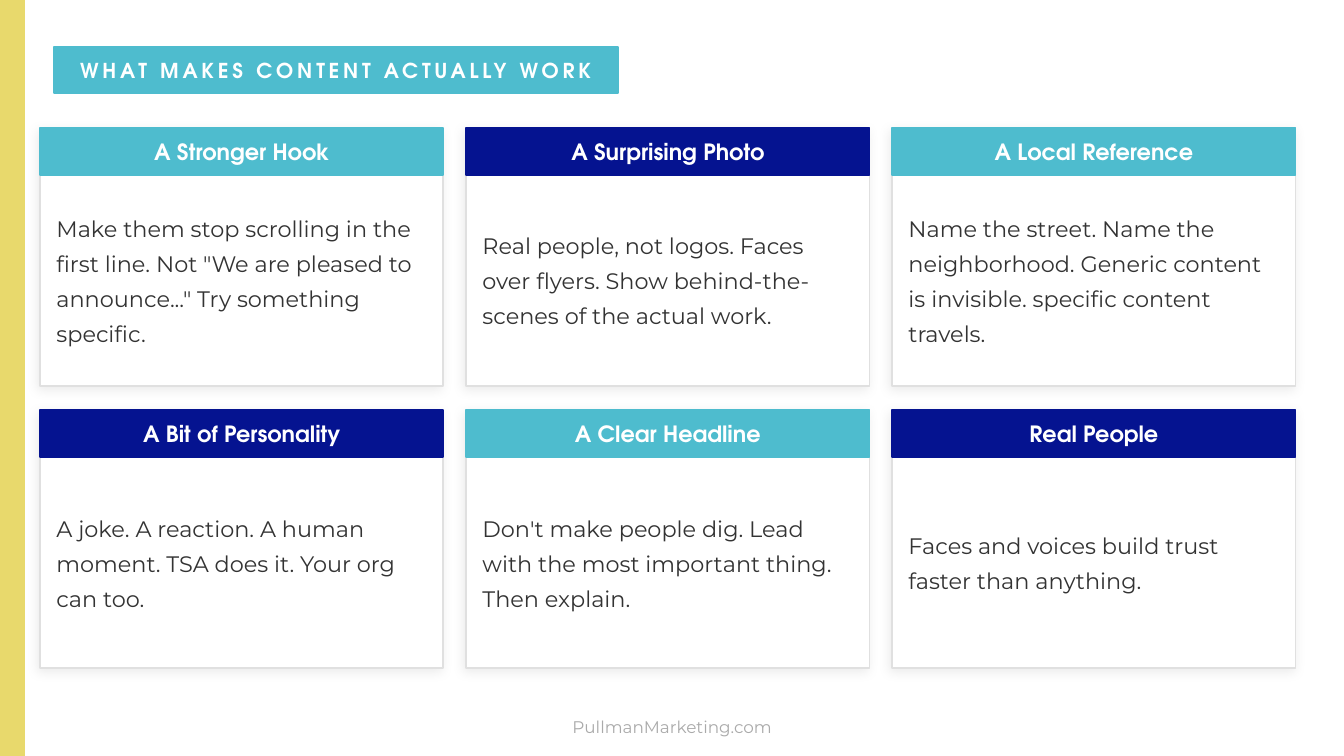
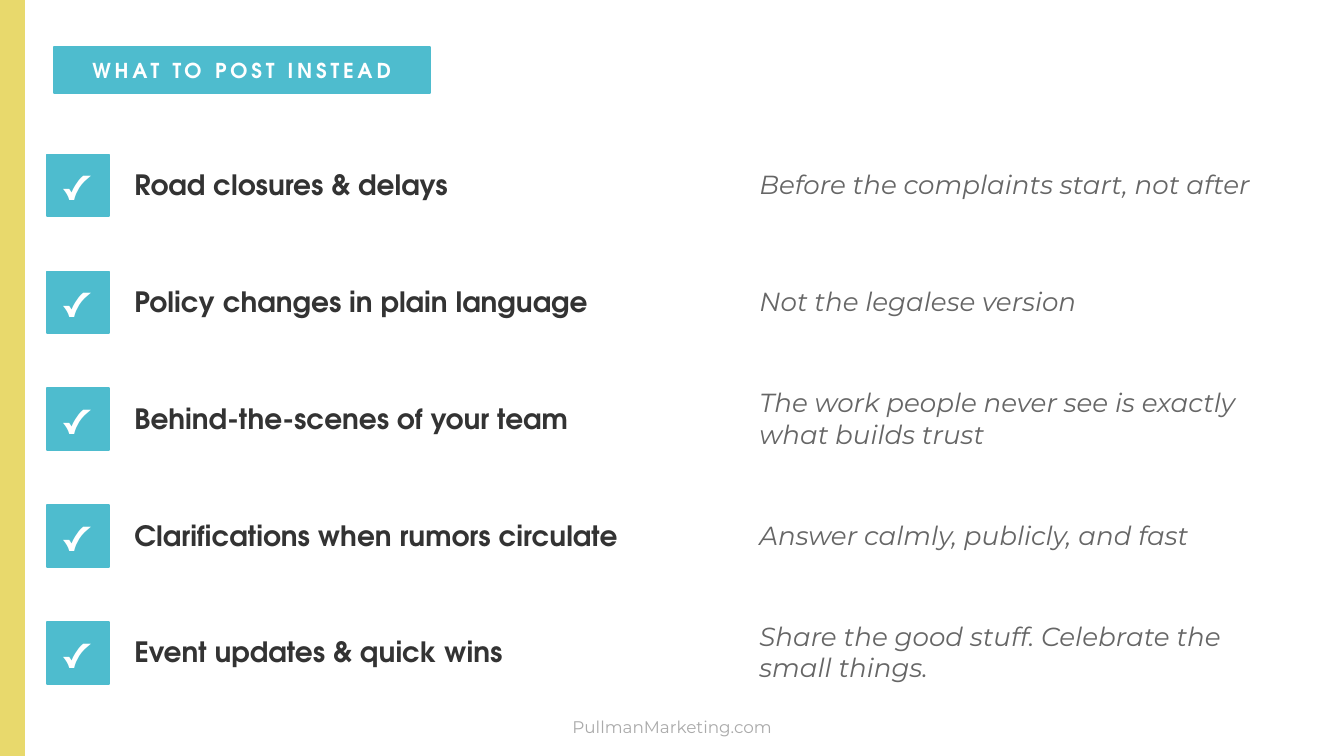
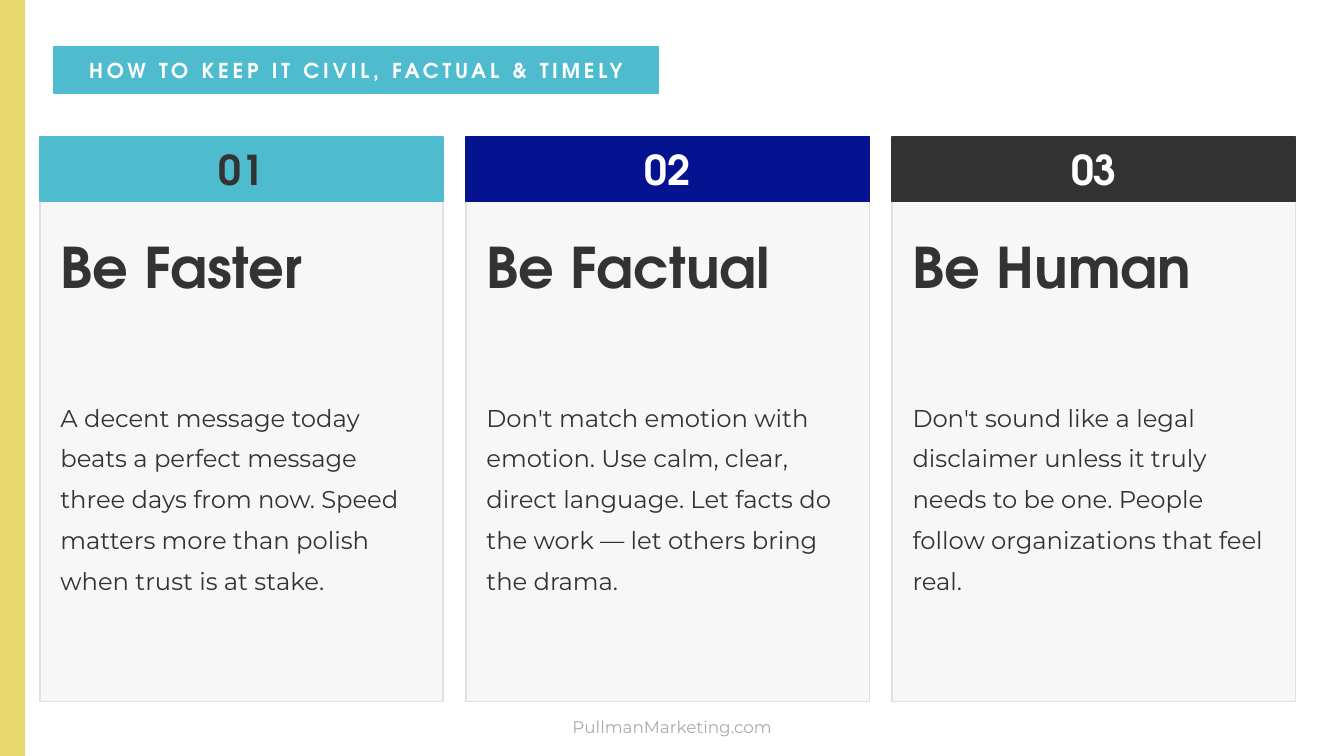
import pptx
import pptx.dml.color
import pptx.enum.shapes
import pptx.enum.text
import pptx.oxml
import pptx.oxml.ns
import pptx.util

Pt = pptx.util.Pt
ALIGN = pptx.enum.text.PP_ALIGN
MIDDLE = pptx.enum.text.MSO_ANCHOR.MIDDLE

# Content
FOOTER = "PullmanMarketing.com"

HOOKS = {
    "title": "WHAT MAKES CONTENT ACTUALLY WORK",
    "title_width": 302.4,
    "cards": [
        ("A Stronger Hook", "teal",
         'Make them stop scrolling in the first line. Not "We are pleased to '
         'announce..." Try something specific.'),
        ("A Surprising Photo", "navy",
         "Real people, not logos. Faces over flyers. Show behind-the-scenes "
         "of the actual work."),
        ("A Local Reference", "teal",
         "Name the street. Name the neighborhood. Generic content is "
         "invisible. specific content travels."),
        ("A Bit of Personality", "navy",
         "A joke. A reaction. A human moment. TSA does it. Your org can too."),
        ("A Clear Headline", "teal",
         "Don't make people dig. Lead with the most important thing. "
         "Then explain."),
        ("Real People", "navy",
         "Faces and voices build trust faster than anything."),
    ],
}

POSTS = {
    "title": "WHAT TO POST INSTEAD",
    "title_width": 201.6,
    "rows": [
        ("Road closures & delays", "Before the complaints start, not after"),
        ("Policy changes in plain language", "Not the legalese version"),
        ("Behind-the-scenes of your team",
         "The work people never see is exactly what builds trust"),
        ("Clarifications when rumors circulate",
         "Answer calmly, publicly, and fast"),
        ("Event updates & quick wins",
         "Share the good stuff. Celebrate the small things."),
    ],
}

RULES = {
    "title": "HOW TO KEEP IT CIVIL, FACTUAL & TIMELY",
    "title_width": 324,
    "cards": [
        ("01", "teal", "number_dark", "Be Faster",
         "A decent message today beats a perfect message three days from now. "
         "Speed matters more than polish when trust is at stake."),
        ("02", "navy", "number", "Be Factual",
         "Don't match emotion with emotion. Use calm, clear, direct language. "
         "Let facts do the work — let others bring the drama."),
        ("03", "ink", "number", "Be Human",
         "Don't sound like a legal disclaimer unless it truly needs to be "
         "one. People follow organizations that feel real."),
    ],
}

# Theme: colours and type styles
HEAD, BODY = "TeX Gyre Adventor", "Montserrat"


def style(name, size, color, align=ALIGN.LEFT, spacing=None, tracking=0, **extra):
    return {"font": {"name": name, "size": Pt(size), **extra}, "color": color,
            "para": {"alignment": align, "line_spacing": spacing},
            "tracking": tracking}


THEME = {
    "colors": {
        "yellow": "E8D96C", "teal": "4EBCCE", "navy": "051390", "ink": "333333",
        "white": "FFFFFF", "panel": "F7F7F7", "border": "E0E0E0",
        "gray": "666666", "pale": "AAAAAA",
    },
    "styles": {
        "title": style(HEAD, 11, "white", ALIGN.CENTER, tracking=2, bold=True),
        "card_head": style(HEAD, 12, "white", ALIGN.CENTER, bold=True),
        "card_body": style(BODY, 12, "ink", spacing=1.3),
        "check": style(HEAD, 20, "white", ALIGN.CENTER, bold=True),
        "topic": style(HEAD, 15, "ink", bold=True),
        "remark": style(BODY, 14, "gray", italic=True),
        "number": style(HEAD, 22, "white", ALIGN.CENTER, bold=True),
        "number_dark": style(HEAD, 22, "ink", ALIGN.CENTER, bold=True),
        "rule": style(HEAD, 30, "ink", bold=True),
        "rule_body": style(BODY, 13, "ink", spacing=1.4),
        "footer": style(BODY, 9, "pale", ALIGN.CENTER),
    },
}

# Layout, in points
SLIDE_W, SLIDE_H = 720, 405
CARD_X, CARD_W, CARD_STEP = 21.6, 216, 228.24


def rgb(name):
    return pptx.dml.color.RGBColor.from_string(THEME["colors"][name])


def add_box(s, x, y, w, h, fill, line=None, shadow=False):
    sp = s.shapes.add_shape(pptx.enum.shapes.MSO_SHAPE.RECTANGLE,
                            Pt(x), Pt(y), Pt(w), Pt(h))
    sp.fill.solid()
    sp.fill.fore_color.rgb = rgb(fill)
    sp.line.color.rgb = rgb(line or fill)
    sp.line.width = Pt(1)
    sp.shadow.inherit = False
    if shadow:
        effects = sp._element.spPr.find(pptx.oxml.ns.qn("a:effectLst"))
        effects.append(pptx.oxml.parse_xml(
            f'<a:outerShdw {pptx.oxml.ns.nsdecls("a")} blurRad="{Pt(6)}" '
            f'dist="{Pt(2)}" dir="8100000" algn="bl" rotWithShape="0">'
            '<a:srgbClr val="000000"><a:alpha val="8000"/></a:srgbClr>'
            '</a:outerShdw>'))


def add_text(s, x, y, w, h, text, style_name):
    fmt = THEME["styles"][style_name]
    tf = s.shapes.add_textbox(Pt(x), Pt(y), Pt(w), Pt(h)).text_frame
    frame = {"word_wrap": True, "vertical_anchor": MIDDLE, "margin_left": 0,
             "margin_right": 0, "margin_top": 0, "margin_bottom": 0}
    p = tf.paragraphs[0]
    r = p.add_run()
    r.text = text
    for target, values in ((tf, frame), (p, fmt["para"]), (r.font, fmt["font"])):
        for key, value in values.items():
            setattr(target, key, value)
    r.font.color.rgb = rgb(fmt["color"])
    if fmt["tracking"]:
        r._r.get_or_add_rPr().set("spc", str(fmt["tracking"] * 100))


def add_band(s, x, y, w, h, fill, text, style_name):
    add_box(s, x, y, w, h, fill)
    add_text(s, x, y, w, h, text, style_name)


def add_slide(prs, content):
    """Blank slide with the side stripe, title band and footer."""
    s = prs.slides.add_slide(prs.slide_layouts[6])
    s.background.fill.solid()
    s.background.fill.fore_color.rgb = rgb("white")
    add_box(s, 0, 0, 12.96, SLIDE_H, "yellow")
    add_band(s, 28.8, 25.2, content["title_width"], 24.48, "teal",
             content["title"], "title")
    add_text(s, 0, 380.16, SLIDE_W, 18.72, FOOTER, "footer")
    return s


# Two rows of three cards
def build_hooks(prs):
    s = add_slide(prs, HOOKS)
    for i, (head, fill, body) in enumerate(HOOKS["cards"]):
        row, col = divmod(i, 3)
        x, y = CARD_X + col * CARD_STEP, 68.4 + row * 151.2
        add_box(s, x, y, CARD_W, 138.24, "white", "border", shadow=True)
        add_band(s, x, y, CARD_W, 25.2, fill, head, "card_head")
        add_text(s, x + 8.64, y + 30.24, CARD_W - 17.28, 99.36, body, "card_body")


# Checklist with remarks
def build_posts(prs):
    s = add_slide(prs, POSTS)
    for i, (topic, remark) in enumerate(POSTS["rows"]):
        y = 81.36 + i * 62.64
        add_band(s, 25.2, y + 1.44, 33.12, 33.12, "teal", "✓", "check")
        add_text(s, 72, y, 324, 34.56, topic, "topic")
        add_text(s, 406.8, y, 288, 34.56, remark, "remark")


# Three numbered columns
def build_rules(prs):
    s = add_slide(prs, RULES)
    y = 73.44
    for i, (number, fill, number_style, rule, body) in enumerate(RULES["cards"]):
        x = CARD_X + i * CARD_STEP
        add_box(s, x, y, CARD_W, 302.4, "panel", "border")
        add_band(s, x, y, CARD_W, 34.56, fill, number, number_style)
        add_text(s, x + 10.8, y + 43.2, CARD_W - 21.6, 51.84, rule, "rule")
        add_text(s, x + 10.8, y + 100.8, CARD_W - 21.6, 180, body, "rule_body")


def main():
    prs = pptx.Presentation()
    prs.slide_width, prs.slide_height = Pt(SLIDE_W), Pt(SLIDE_H)
    for build in (build_hooks, build_posts, build_rules):
        build(prs)
    prs.save("out.pptx")


if __name__ == "__main__":
    main()
